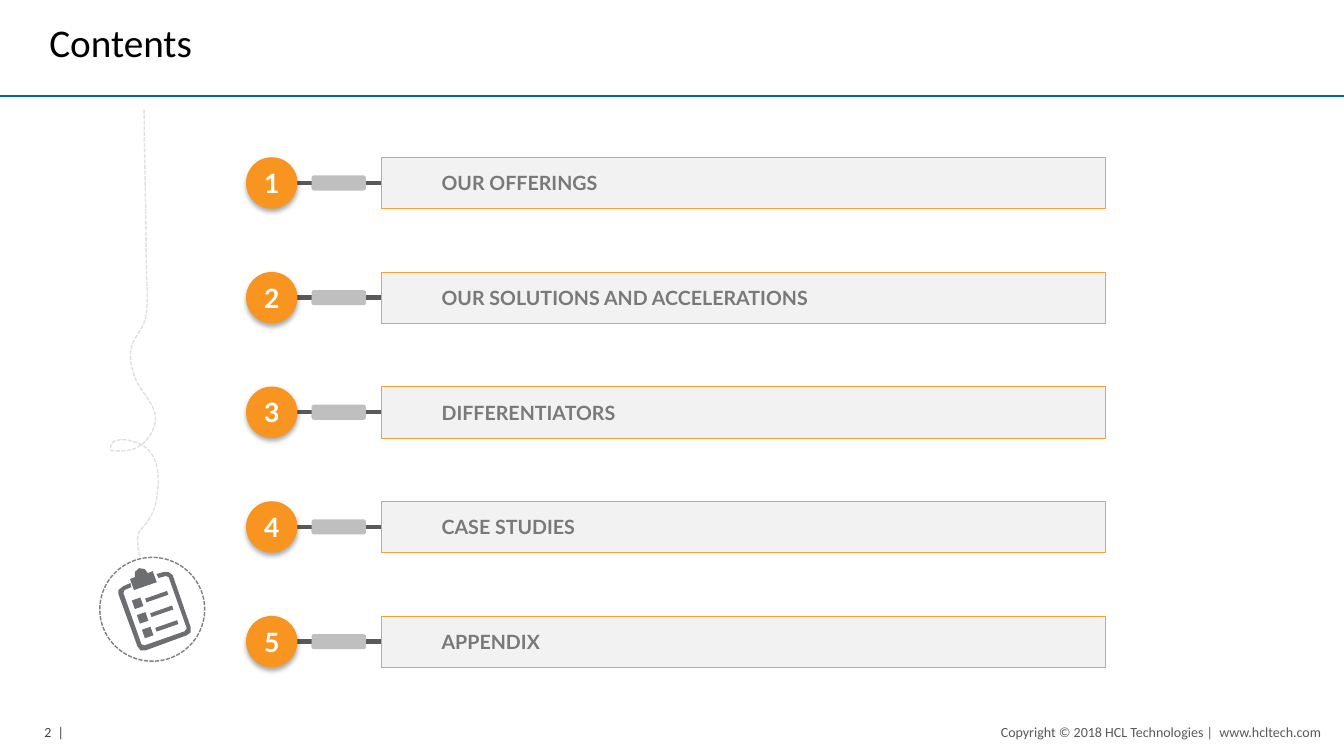
"""Build the contents slide: five numbered bars beside a clipboard on a string."""
import math
import pptx
import pptx.util
import pptx.dml.color
import pptx.enum.dml
import pptx.enum.shapes
import pptx.enum.text
import pptx.oxml
import pptx.oxml.ns

TITLE = "Contents"
ITEMS = ["OUR OFFERINGS", "OUR SOLUTIONS AND ACCELERATIONS", "DIFFERENTIATORS",
         "CASE STUDIES", "APPENDIX"]
PAGE = "2  |"
FOOTER = "Copyright © 2018 HCL Technologies |  www.hcltech.com"
COLORS = {"rule": "0066B3", "title": "000000", "page": "404040", "foot": "595959",
          "bar": "F2F2F2", "edge": "FD9E2E", "label": "797979", "disc": "F89521",
          "white": "FFFFFF", "link": "595959", "plug": "BFBFBF", "string": "DEE0E2",
          "icon": "6D6E71", "ring": "808080"}

WIDE, HIGH = 13.33, 7.5
FIRST, LAST, SIZE = 1.56, 6.11, 0.51
DISC_X, PLUG_X, BAR_X, BAR_W = 2.44, 3.09, 3.78, 7.18
PLUG_W, PLUG_H = 0.54, 0.15
TILT = 340.7

STRING = [
    (1.39, 5.52), (1.37, 5.48), (1.36, 5.36), (1.37, 5.31),
    (1.39, 5.24), (1.43, 5.23), (1.46, 5.18), (1.52, 5.1), (1.55, 5), (1.56, 4.9),
    (1.59, 4.68), (1.56, 4.46), (1.35, 4.39), (1.28, 4.36), (1.07, 4.32), (1.1, 4.47),
    (1.25, 4.48), (1.38, 4.48), (1.48, 4.33), (1.65, 4.08), (1.43, 3.96), (1.34, 3.75),
    (1.31, 3.67), (1.28, 3.55), (1.3, 3.46), (1.32, 3.35), (1.41, 3.28), (1.44, 3.17),
    (1.48, 2.99), (1.45, 2.76), (1.45, 2.57), (1.45, 2.16), (1.43, 1.5), (1.43, 1.09)]
BOARD = [(1.62, 5.67), (1.55, 5.69), (1.57, 5.73), (1.64, 5.71), (1.67, 5.72),
         (1.85, 6.23), (1.83, 6.26), (1.43, 6.4), (1.4, 6.39), (1.22, 5.88),
         (1.23, 5.85), (1.3, 5.82), (1.29, 5.78), (1.22, 5.81), (1.17, 5.85),
         (1.17, 5.89), (1.36, 6.41), (1.39, 6.45), (1.44, 6.45), (1.85, 6.3),
         (1.89, 6.27), (1.89, 6.22), (1.71, 5.7), (1.67, 5.67)]
BOARD_BOX = (1.25, 5.72, 0.57, 0.68)
CLIP = [(1.52, 5.66), (1.47, 5.68), (1.44, 5.64), (1.38, 5.63), (1.34, 5.67),
        (1.34, 5.72), (1.29, 5.74), (1.33, 5.85), (1.56, 5.77)]
CLIP_BOX = (1.29, 5.63, 0.24, 0.19)

KINDS = pptx.enum.shapes.MSO_SHAPE
ALIGN = pptx.enum.text.PP_ALIGN
ANCHOR = pptx.enum.text.MSO_ANCHOR
DASH = pptx.enum.dml.MSO_LINE.SQUARE_DOT
inch, point = pptx.util.Inches, pptx.util.Pt
qname, spaces = pptx.oxml.ns.qn, pptx.oxml.ns.nsdecls("a")


def tint(name):
    return pptx.dml.color.RGBColor.from_string(COLORS[name])


def put(frame, text, font="Calibri", size=10, color="title", bold=False,
        align=ALIGN.LEFT, anchor=ANCHOR.MIDDLE, pads=(0, 0, 0, 0)):
    frame.word_wrap = True
    frame.auto_size = pptx.enum.text.MSO_AUTO_SIZE.NONE
    frame.vertical_anchor = anchor
    (frame.margin_left, frame.margin_top,
     frame.margin_right, frame.margin_bottom) = map(inch, pads)
    para = frame.paragraphs[0]
    para.alignment = align
    run = para.add_run()
    run.text = text
    run.font.name, run.font.size, run.font.bold = font, point(size), bold
    run.font.color.rgb = tint(color)


def paint(shape, fill=None, line=None, width=1, dash=None):
    shape.shadow.inherit = False
    if fill:
        shape.fill.solid()
        shape.fill.fore_color.rgb = tint(fill)
    else:
        shape.fill.background()
    if line:
        shape.line.color.rgb = tint(line)
        shape.line.width = point(width)
        if dash:
            shape.line.dash_style = dash
    else:
        shape.line.fill.background()
    return shape


def block(shapes, kind, box, turn=0, **look):
    shape = paint(shapes.add_shape(kind, *map(inch, box)), **look)
    shape.rotation = turn
    return shape


def trace(shapes, spots, close, **look):
    spots = [(inch(x), inch(y)) for x, y in spots]
    maker = shapes.build_freeform(*spots[0], scale=1.0)
    maker.add_line_segments(spots[1:], close=close)
    return paint(maker.convert_to_shape(), **look)


def curve(shape):
    lines = list(shape._element.iter(qname("a:lnTo")))
    for first in range(0, len(lines), 3):
        bend = pptx.oxml.parse_xml(f"<a:cubicBezTo {spaces}/>")
        lines[first].addprevious(bend)
        for line in lines[first:first + 3]:
            bend.append(line[0])
            line.getparent().remove(line)


def tilt(shapes, spots, box, **look):
    left, top, width, height = box
    mid_x, mid_y = left + width / 2, top + height / 2
    angle = math.radians(360 - TILT)
    cos, sin = math.cos(angle), math.sin(angle)
    flat = [(mid_x + (x - mid_x) * cos - (y - mid_y) * sin,
             mid_y + (x - mid_x) * sin + (y - mid_y) * cos) for x, y in spots]
    shape = trace(shapes, flat, True, **look)
    shape.left, shape.top, shape.width, shape.height = map(inch, box)
    shape.rotation = TILT


def wire(shapes, x, y, end, color, width):
    line = shapes.add_connector(pptx.enum.shapes.MSO_CONNECTOR.STRAIGHT,
                                inch(x), inch(y), inch(end), inch(y))
    line.line.color.rgb = tint(color)
    line.line.width = point(width)
    line._element.spPr.append(pptx.oxml.parse_xml(f"<a:effectLst {spaces}/>"))
    return line


def shade(shape):
    shape._element.spPr.find(qname("a:effectLst")).append(pptx.oxml.parse_xml(
        f'<a:outerShdw {spaces} blurRad="{point(3.5)}" dist="{point(2.2)}" '
        'dir="5400000" algn="t" rotWithShape="0">'
        '<a:srgbClr val="000000"><a:alpha val="32000"/></a:srgbClr></a:outerShdw>'))


def row(shapes, rank, text):
    top = FIRST + rank * (LAST - FIRST) / (len(ITEMS) - 1)
    mid = top + SIZE / 2
    bar = block(shapes, KINDS.RECTANGLE, (BAR_X, top, BAR_W, SIZE),
                fill="bar", line="edge", width=0.25)
    put(bar.text_frame, text, font="Lato", size=14, color="label", bold=True,
        pads=(0.6, 0.09, 0.18, 0.09))
    link = wire(shapes, DISC_X + SIZE, mid, BAR_X, "link", 3)
    link.end_connect(bar, 1)
    block(shapes, KINDS.ROUNDED_RECTANGLE,
          (PLUG_X, mid - PLUG_H / 2, PLUG_W, PLUG_H), fill="plug")
    disc = block(shapes, KINDS.OVAL, (DISC_X, top, SIZE, SIZE), fill="disc")
    shade(disc)
    put(disc.text_frame, str(rank + 1), font="Lato", size=19, color="white",
        bold=True, align=ALIGN.CENTER)


def icon(shapes):
    curve(trace(shapes, STRING, False, line="string", dash=DASH))
    tilt(shapes, BOARD, BOARD_BOX, fill="icon")
    for rank in range(3):
        x, y = 1.32 + 0.05 * rank, 5.94 + 0.145 * rank
        block(shapes, KINDS.RECTANGLE, (x, y, 0.09, 0.09), TILT, fill="icon")
        block(shapes, KINDS.RECTANGLE, (x + 0.12, y - 0.04, 0.23, 0.04), TILT,
              fill="icon")
    tilt(shapes, CLIP, CLIP_BOX, fill="icon")
    block(shapes, KINDS.OVAL, (0.99, 5.53, 1.04, 1.03), line="ring", dash=DASH)


def main():
    deck = pptx.Presentation()
    deck.slide_width, deck.slide_height = inch(WIDE), inch(HIGH)
    slide = deck.slides.add_slide(deck.slide_layouts[5])
    shapes = slide.shapes
    head = shapes.title
    head.left, head.top, head.width, head.height = map(inch, (0.44, 0.13, 11.71, 0.57))
    put(head.text_frame, TITLE, size=28, anchor=ANCHOR.TOP, pads=(0.05,) * 4)
    wire(shapes, 0, 0.95, WIDE, "rule", 1.5)
    for text, x, width, color, align in (
            (PAGE, 0.44, 0.29, "page", ALIGN.LEFT),
            (FOOTER, 9.85, 3.25, "foot", ALIGN.RIGHT)):
        note = shapes.add_textbox(inch(x), inch(7.18), inch(width), inch(0.17))
        put(note.text_frame, text, color=color, align=align)
    for rank, text in enumerate(ITEMS):
        row(shapes, rank, text)
    icon(shapes)
    deck.save("out.pptx")


if __name__ == "__main__":
    main()
